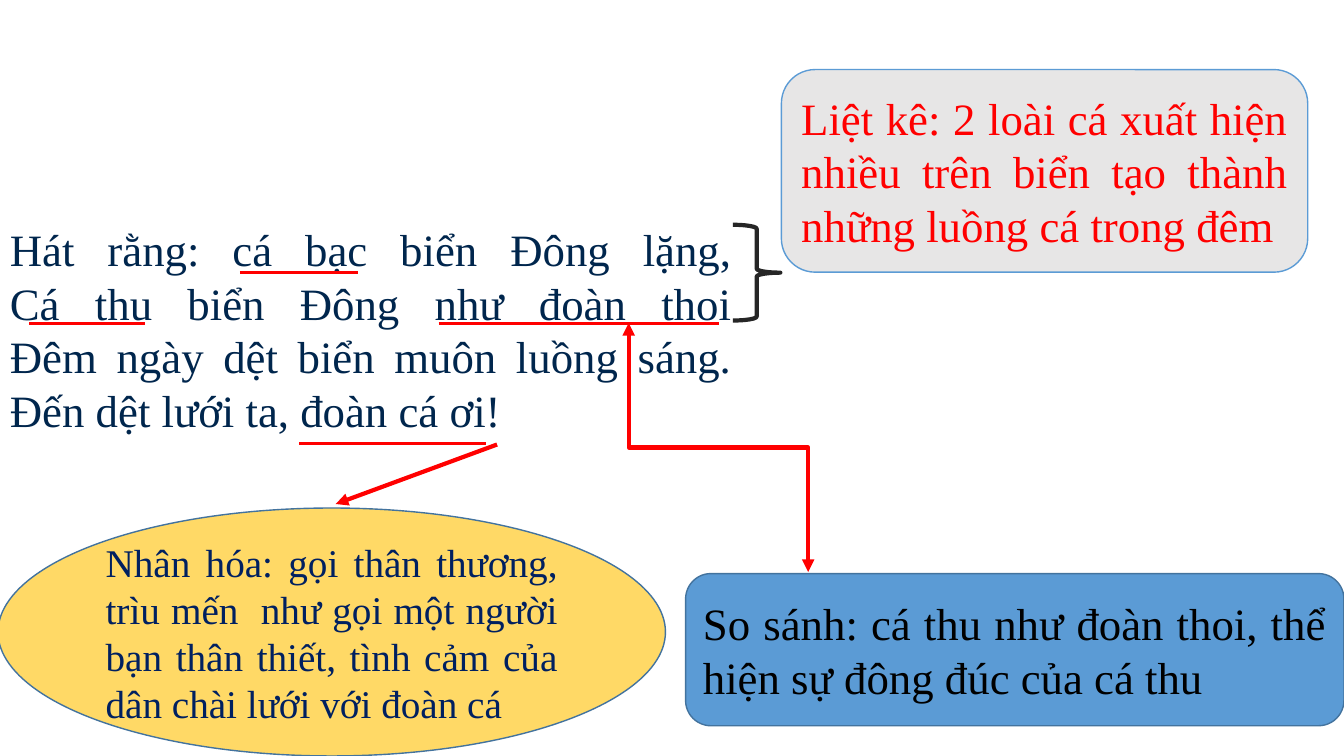
from lxml.etree import SubElement
from pptx import Presentation
from pptx.dml.color import RGBColor
from pptx.enum.shapes import MSO_CONNECTOR, MSO_SHAPE
from pptx.enum.text import MSO_ANCHOR, PP_ALIGN
from pptx.oxml.ns import qn
from pptx.util import Inches, Pt

RED = RGBColor(0xFF, 0x00, 0x00)
BLACK = RGBColor(0x00, 0x00, 0x00)
VERSE_NAVY = RGBColor(0x00, 0x26, 0x4D)
NOTE_NAVY = RGBColor(0x00, 0x20, 0x60)
CHARCOAL = RGBColor(0x26, 0x26, 0x26)
GRAY = RGBColor(0xE7, 0xE6, 0xE6)
BLUE = RGBColor(0x5B, 0x9B, 0xD5)
DARK_BLUE = RGBColor(0x43, 0x73, 0x9E)
YELLOW = RGBColor(0xFF, 0xD9, 0x66)


def write(shape, text, size, color):
    shape.text_frame.word_wrap = True
    para = shape.text_frame.paragraphs[0]
    para.text = text
    para.alignment = PP_ALIGN.JUSTIFY
    para.font.name = "Times New Roman"
    para.font.size = Pt(size)
    para.font.color.rgb = color


def connect(kind, start, end, width, arrowheads=()):
    connector = page.shapes.add_connector(kind, *map(Inches, start + end))
    connector.line.color.rgb = RED
    connector.line.width = Pt(width)
    for arrowhead in arrowheads:
        SubElement(connector.line._get_or_add_ln(), qn(arrowhead), type="triangle")
    SubElement(connector._element.spPr, qn("a:effectLst"))
    return connector


deck = Presentation()
deck.slide_width = Inches(13.33)
deck.slide_height = Inches(7.5)
page = deck.slides.add_slide(deck.slide_layouts[6])

verse = page.shapes.add_textbox(Inches(0), Inches(2.15), Inches(7.36), Inches(2.26))
write(verse, "\n".join([
    "Hát rằng: cá bạc biển Đông lặng,",
    "Cá thu biển Đông như đoàn thoi",
    "Đêm ngày dệt biển muôn luồng sáng.",
    "Đến dệt lưới ta, đoàn cá ơi!",
]), 32, VERSE_NAVY)

brace = page.shapes.add_shape(
    MSO_SHAPE.RIGHT_BRACE, Inches(7.27), Inches(2.23), Inches(0.47), Inches(0.95))
brace.shadow.inherit = False
brace.fill.background()
brace.line.color.rgb = CHARCOAL
brace.line.width = Pt(3)

callouts = [
    (MSO_SHAPE.ROUNDED_RECTANGLE, (7.75, 0.69, 5.22, 2.01), GRAY, BLUE, 32, RED,
     "Liệt kê: 2 loài cá xuất hiện nhiều trên biển tạo thành những luồng cá trong đêm"),
    (MSO_SHAPE.ROUNDED_RECTANGLE, (6.8, 5.69, 6.53, 1.51), BLUE, DARK_BLUE, 32, BLACK,
     "So sánh: cá thu như đoàn thoi, thể hiện sự đông đúc của cá thu"),
    (MSO_SHAPE.OVAL, (-0.02, 5.04, 6.62, 2.46), YELLOW, DARK_BLUE, 28, NOTE_NAVY,
     "Nhân hóa: gọi thân thương, trìu mến  như gọi một người bạn thân thiết, "
     "tình cảm của dân chài lưới với đoàn cá"),
]
for kind, place, fill, outline, size, color, text in callouts:
    callout = page.shapes.add_shape(kind, *map(Inches, place))
    callout.shadow.inherit = False
    callout.fill.solid()
    callout.fill.fore_color.rgb = fill
    callout.line.color.rgb = outline
    callout.line.width = Pt(1)
    callout.text_frame.vertical_anchor = MSO_ANCHOR.MIDDLE
    write(callout, text, size, color)

for left, right, height in [(2.38, 3.55, 2.7), (0.29, 1.44, 3.21),
                            (4.35, 7.13, 3.21), (2.97, 4.82, 4.4)]:
    connect(MSO_CONNECTOR.STRAIGHT, (left, height), (right, height), 2.25)

connect(MSO_CONNECTOR.STRAIGHT, (4.93, 4.41), (3.33, 5), 3, ["a:tailEnd"])
elbow = connect(MSO_CONNECTOR.ELBOW, (8.36, 3.55), (5.89, 5.33), 3,
                ["a:headEnd", "a:tailEnd"])
elbow._element.spPr.find(qn("a:xfrm")).set("rot", str(270 * 60000))

deck.save("out.pptx")
